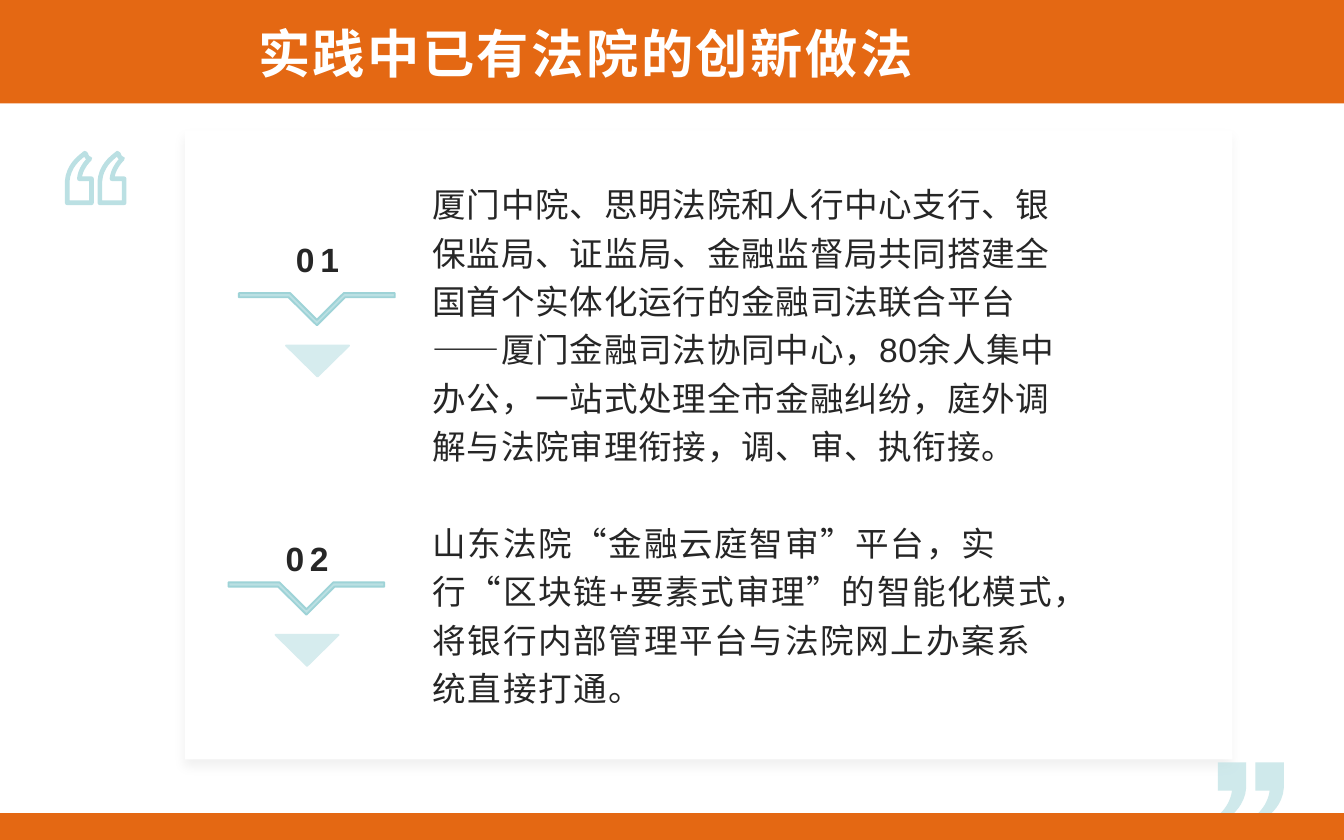
from lxml import etree
from pptx import Presentation
from pptx.dml.color import RGBColor
from pptx.enum.shapes import MSO_SHAPE
from pptx.enum.text import MSO_ANCHOR, MSO_AUTO_SIZE, PP_ALIGN
from pptx.oxml.ns import qn
from pptx.util import Pt

RECTANGLE = MSO_SHAPE.RECTANGLE
TRIANGLE = MSO_SHAPE.ISOSCELES_TRIANGLE
MIDDLE = MSO_ANCHOR.MIDDLE
NO_FIT = MSO_AUTO_SIZE.NONE
LEFT, CENTER = PP_ALIGN.LEFT, PP_ALIGN.CENTER

ORANGE, WHITE, INK = "E46813", "FFFFFF", "262626"
AQUA, AQUA_EDGE, AQUA_PALE = "BBE0E3", "9ED3D7", "D6ECEE"
CJK_FONT = "Noto Sans CJK SC"

CHEVRON = [(0, 0), (27.4, 0), (41.8, 14.4), (56.2, 0), (83.5, 0),
           (83.5, 2.3), (56.9, 2.3), (41.8, 17.3), (26.6, 2.3), (0, 2.3)]


def color(value):
    return RGBColor.from_string(value)


def curve(start, first, second, end, steps=10):
    points = []
    for step in range(1, steps + 1):
        t = step / steps
        u = 1 - t
        points.append(tuple(
            u**3 * a + 3 * u * u * t * b + 3 * u * t * t * c + t**3 * d
            for a, b, c, d in zip(start, first, second, end)))
    return points


QUOTE = ([(9.4, 0), (10.1, 0.7)]
         + curve((10.1, 0.7), (10.1, 1.4), (10.8, 2.2), (11.5, 2.9))
         + [(12.2, 2.9)]
         + curve((12.2, 2.9), (12.2, 2.9), (7.2, 7.2), (6.5, 13.7))
         + [(13, 13.7), (13, 26.6), (0, 26.6), (0, 15.1)]
         + curve((0, 15.1), (0.7, 5), (9.4, 0.7), (9.4, 0)))


class SlideBuilder:
    def __init__(self, page):
        self.page = page

    def paint(self, shape, fill=None, line=None, width=1):
        shape.shadow.inherit = False
        if fill:
            shape.fill.solid()
            shape.fill.fore_color.rgb = color(fill)
        else:
            shape.fill.background()
        if line:
            shape.line.color.rgb = color(line)
            shape.line.width = Pt(width)
        else:
            shape.line.fill.background()
        return shape

    def shape(self, kind, left, top, width, height, fill, line=None):
        shape = self.page.shapes.add_shape(
            kind, Pt(left), Pt(top), Pt(width), Pt(height))
        return self.paint(shape, fill, line)

    def outline(self, points, left, top, scale=1, **style):
        placed = [(Pt(left + x * scale), Pt(top + y * scale)) for x, y in points]
        builder = self.page.shapes.build_freeform(*placed[0])
        builder.add_line_segments(placed[1:], close=True)
        return self.paint(builder.convert_to_shape(), **style)

    def shadow(self, shape, blur, distance, opacity):
        effects = shape._element.spPr.find(qn("a:effectLst"))
        outer = etree.SubElement(
            effects, qn("a:outerShdw"), blurRad=str(Pt(blur)),
            dist=str(Pt(distance)), dir="5400000", algn="t", rotWithShape="0")
        black = etree.SubElement(outer, qn("a:srgbClr"), val="000000")
        etree.SubElement(black, qn("a:alpha"), val=str(opacity * 1000))

    def fade(self, shape, opacity):
        fill = shape._element.spPr.find(qn("a:solidFill"))
        etree.SubElement(fill[0], qn("a:alpha"), val=str(opacity * 1000))

    def set_text(self, box, text, size, ink, font, spacing, align=LEFT,
                 bold=False, inset=(0, 0), line_spacing=1, after=0):
        frame = box.text_frame
        frame.word_wrap = True
        frame.auto_size = NO_FIT
        frame.vertical_anchor = MIDDLE
        frame.margin_left = frame.margin_right = Pt(inset[0])
        frame.margin_top = frame.margin_bottom = Pt(inset[1])
        frame.text = text
        para = frame.paragraphs[0]
        para.alignment = align
        para.line_spacing = line_spacing
        para.space_before = Pt(0)
        para.space_after = Pt(after)
        para.font.size = Pt(size)
        para.font.bold = bold
        para.font.name = font
        para.font.color.rgb = color(ink)
        properties = para._p.pPr.find(qn("a:defRPr"))
        properties.set("spc", str(round(spacing * 100)))
        latin = properties.find(qn("a:latin"))
        latin.addnext(latin.makeelement(qn("a:ea"), {"typeface": CJK_FONT}))

    def text(self, left, top, width, height, text, **style):
        box = self.page.shapes.add_textbox(
            Pt(left), Pt(top), Pt(width), Pt(height))
        self.set_text(box, text, 18, INK, "Arial", **style)

    def title(self, left, top, width, height, text):
        box = self.page.shapes.title
        box.left, box.top = Pt(left), Pt(top)
        box.width, box.height = Pt(width), Pt(height)
        self.set_text(box, text, 28, WHITE, CJK_FONT, spacing=1.4,
                      align=CENTER, bold=True, inset=(3.6, 1.4))
        self.page.shapes._spTree.append(box._element)

    def practice(self, number, left, top, number_top, body_top, body, spacing):
        triangle = self.shape(TRIANGLE, left + 25.2, top + 28.1, 33.8, 16.6,
                              AQUA_PALE, AQUA_PALE)
        triangle.rotation = 180
        self.outline(CHEVRON, left, top, fill=AQUA, line=AQUA_EDGE)
        self.text(left + 19.4, number_top, 45.4, 37.4, number, spacing=3,
                  align=CENTER, bold=True, line_spacing=1.5)
        self.text(226.8, body_top, 349.2, 80.6, body, spacing=spacing,
                  inset=(5, 2.9), line_spacing=1.2, after=8)


def main():
    deck = Presentation()
    deck.slide_width, deck.slide_height = Pt(720), Pt(450)
    builder = SlideBuilder(deck.slides.add_slide(deck.slide_layouts[5]))

    for left in (36, 53.5):
        builder.outline(QUOTE, left, 82.1, line=AQUA, width=2.5)
    card = builder.shape(RECTANGLE, 99.2, 69.8, 561, 337, WHITE)
    builder.shadow(card, blur=6, distance=4, opacity=6)
    for right in (687.8, 667.6):
        mark = builder.outline(QUOTE, right, 439.6, scale=-1.17, fill=AQUA)
        builder.fade(mark, 70)

    builder.practice(
        "01", 128, 157, 114.5, 131.8,
        "厦门中院、思明法院和人行中心支行、银保监局、证监局、金融监督局共同搭建"
        "全国首个实体化运行的金融司法联合平台——厦门金融司法协同中心，80余人集中办公，"
        "一站式处理全市金融纠纷，庭外调解与法院审理衔接，调、审、执衔接。", 0.4)
    builder.practice(
        "02", 122.4, 312, 275, 287.3,
        "山东法院“金融云庭智审”平台，实行“区块链+要素式审理”的智能化模式，"
        "将银行内部管理平台与法院网上办案系统直接打通。", 0.9)

    builder.shape(RECTANGLE, 0, -4.3, 722, 59.8, ORANGE)
    builder.title(70.6, 8.6, 486, 39.6, "实践中已有法院的创新做法")
    builder.shape(RECTANGLE, 0, 435.6, 720, 14.4, ORANGE)
    deck.save("out.pptx")


if __name__ == "__main__":
    main()
